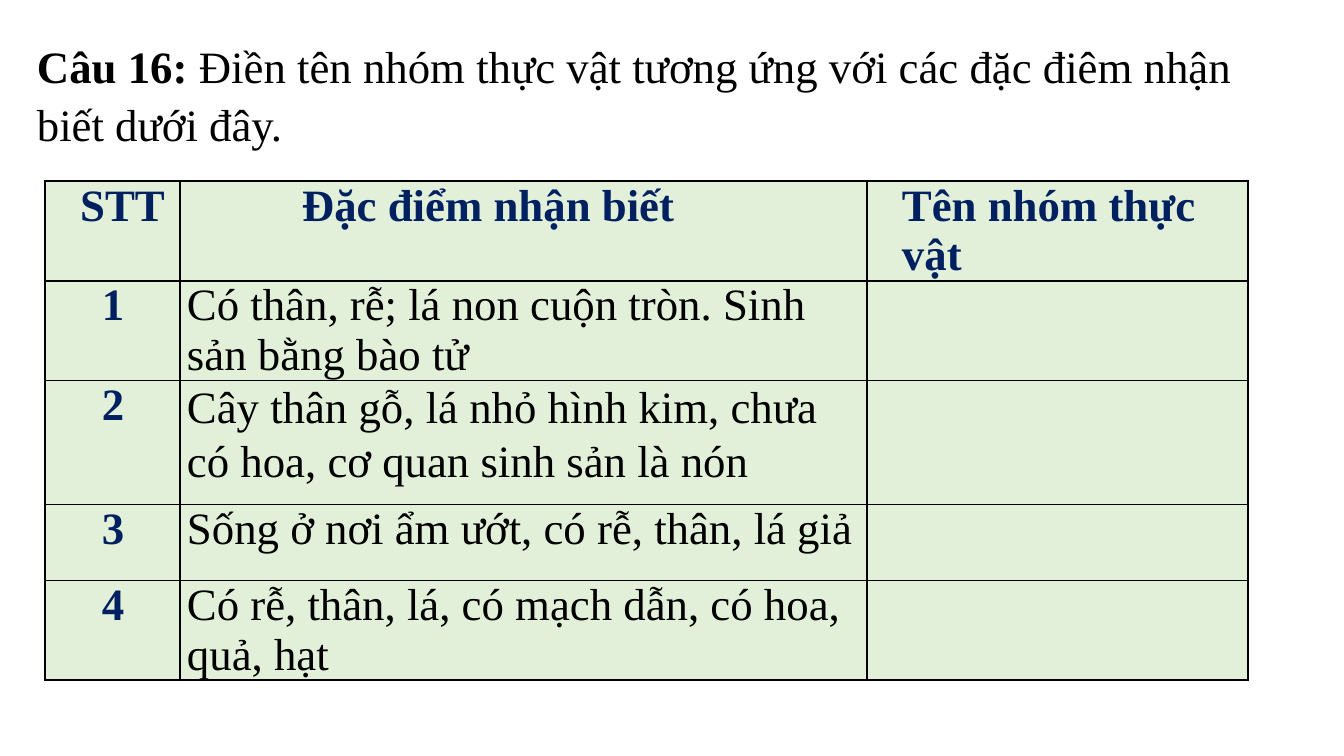
from lxml import etree
from pptx import Presentation
from pptx import util as u
from pptx.dml.color import RGBColor
from pptx.enum import text
from pptx.oxml import ns

PX = 914400 / 100.8
FONT = "Times New Roman"
SIZE = u.Pt(32)
BLACK = RGBColor(0x00, 0x00, 0x00)
NAVY = RGBColor(0x00, 0x20, 0x60)
PALE_GREEN = RGBColor(0xE2, 0xF0, 0xD9)

COLUMN_WIDTHS = [135, 687, 381]
ROW_HEIGHTS = [100, 99, 124, 76, 99]
HEADERS = [("STT", 20), ("Đặc điểm nhận biết", 122), ("Tên nhóm thực vật", 35)]
FEATURES = [
    # feature, space before in points, line spacing
    ("Có thân, rễ; lá non cuộn tròn. Sinh sản bằng bào tử", 1.3, None),
    ("Cây thân gỗ, lá nhỏ hình kim, chưa có hoa, cơ quan sinh sản là nón", 1.5, 1.07),
    ("Sống ở nơi ẩm ướt, có rễ, thân, lá giả", 1.2, None),
    ("Có rễ, thân, lá, có mạch dẫn, có hoa, quả, hạt", 1.2, None),
]


def px(length):
    return u.Emu(round(length * PX))


def style_span(span, color, bold):
    span.font.name = FONT
    span.font.size = SIZE
    span.font.color.rgb = color
    span.font.bold = bold


def space_para(para, indent, before, line_spacing=None):
    para._p.get_or_add_pPr().set("marL", str(px(indent)))
    para.space_before = u.Pt(before)
    if line_spacing:
        para.line_spacing = line_spacing


def add_question(page):
    box = page.shapes.add_textbox(px(-12), px(29), px(1262), px(119))
    box.text_frame.word_wrap = True
    box.text_frame.auto_size = text.MSO_AUTO_SIZE.SHAPE_TO_FIT_TEXT
    para = box.text_frame.paragraphs[0]
    space_para(para, 39, 9.2, 1.08)
    for wording, bold in [
        ("Câu 16: ", True),
        ("Điền tên nhóm thực vật tương ứng với các đặc điêm nhận biết dưới đây.", False),
    ]:
        span = para.add_run()
        span.text = wording
        style_span(span, BLACK, bold)


def outline_cell(cell):
    """Draw a thin black border on all four sides and fill the cell."""
    properties = cell._tc.get_or_add_tcPr()
    for side in ("lnL", "lnR", "lnT", "lnB"):
        line = etree.SubElement(properties, ns.qn(f"a:{side}"), w=str(u.Pt(1)))
        fill = etree.SubElement(line, ns.qn("a:solidFill"))
        etree.SubElement(fill, ns.qn("a:srgbClr"), val=str(BLACK))
    cell.fill.solid()
    cell.fill.fore_color.rgb = PALE_GREEN


def write_cell(cell, wording, indent, before, heading=True, centred=False, line_spacing=None):
    cell.margin_left = cell.margin_right = cell.margin_top = cell.margin_bottom = 0
    cell.text_frame.text = wording
    para = cell.text_frame.paragraphs[0]
    space_para(para, indent, before, line_spacing)
    para.alignment = text.PP_ALIGN.CENTER if centred else text.PP_ALIGN.LEFT
    style_span(para.runs[0], NAVY if heading else BLACK, heading)


def add_plant_table(page):
    frame = page.shapes.add_table(
        len(ROW_HEIGHTS), len(COLUMN_WIDTHS), px(45), px(181),
        px(sum(COLUMN_WIDTHS)), px(sum(ROW_HEIGHTS)))
    table = frame.table
    table.horz_banding = False
    for column, width in zip(table.columns, COLUMN_WIDTHS):
        column.width = px(width)
    for row, height in zip(table.rows, ROW_HEIGHTS):
        row.height = px(height)
    for cell in table.iter_cells():
        outline_cell(cell)

    for column, (header, indent) in enumerate(HEADERS):
        write_cell(table.cell(0, column), header, indent, 2.1, centred=column == 0)
    for number, (feature, before, line_spacing) in enumerate(FEATURES, start=1):
        write_cell(table.cell(number, 0), str(number), 1, before, centred=True)
        write_cell(table.cell(number, 1), feature, 7, before,
                   heading=False, line_spacing=line_spacing)


def main():
    deck = Presentation()
    deck.slide_width, deck.slide_height = px(1344), px(756)
    page = deck.slides.add_slide(deck.slide_layouts[6])
    add_plant_table(page)
    add_question(page)
    deck.save("out.pptx")


if __name__ == "__main__":
    main()
